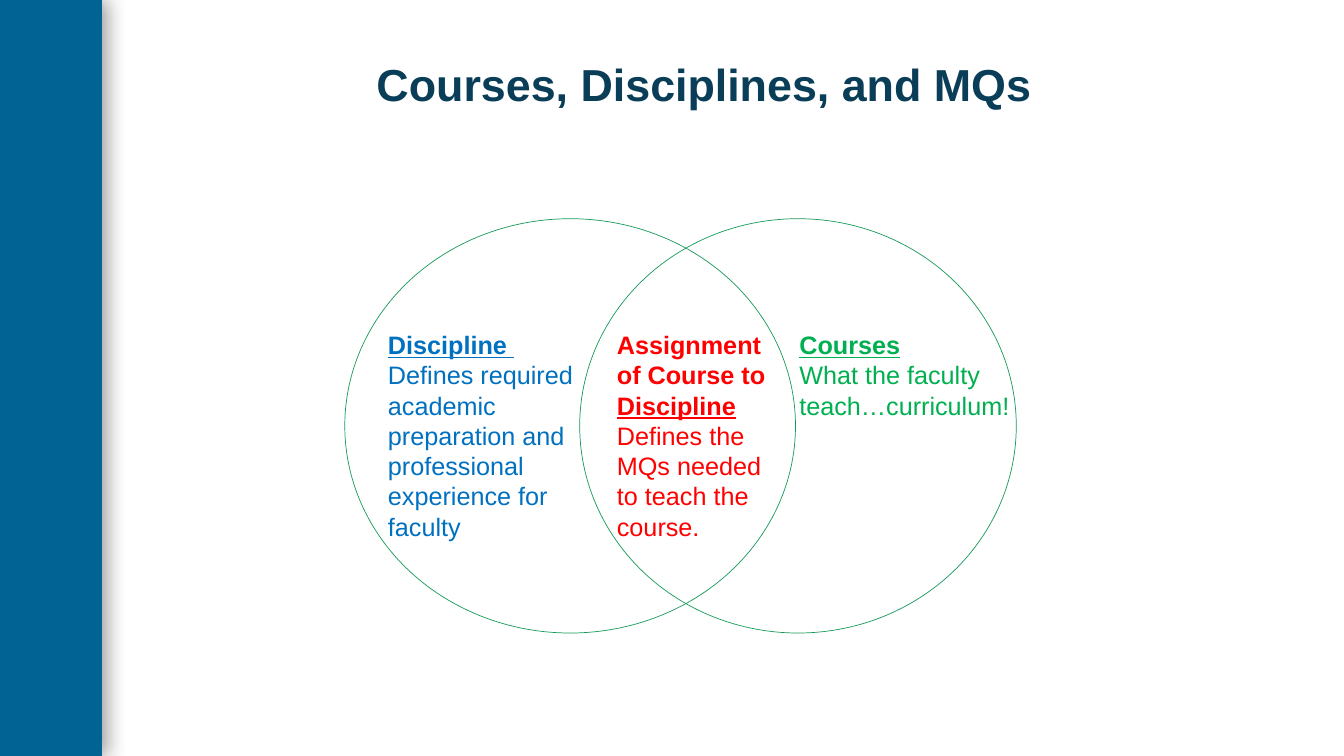
from lxml import etree
from pptx import Presentation
from pptx.dml.color import RGBColor
from pptx.enum.shapes import MSO_SHAPE as Preset
from pptx.enum.text import MSO_AUTO_SIZE as AutoSize, PP_ALIGN as Align
from pptx.oxml.ns import qn
from pptx.util import Inches, Pt

NAVY = RGBColor(0x0A, 0x3D, 0x57)
TEAL = RGBColor(0x00, 0x63, 0x93)
OUTLINE = RGBColor(0x18, 0x9B, 0x5A)
BLUE = RGBColor(0x00, 0x70, 0xC0)
GREEN = RGBColor(0x00, 0xB0, 0x50)
RED = RGBColor(0xFF, 0x00, 0x00)

# Content: each run is (text, bold, underlined)
TITLE = [[("Courses, Disciplines, and MQs", True, False)]]
DISCIPLINE = [
    [("Discipline", True, True), (" ", False, True)],
    [("Defines required academic preparation and professional experience for faculty", False, False)],
]
COURSES = [
    [("Courses", True, True)],
    [("What the faculty teach…curriculum!", False, False)],
]
ASSIGNMENT = [[
    ("Assignment of Course to ", True, False),
    ("Discipline", True, True),
    (" Defines the MQs needed to teach the course.", False, False),
]]

# Layout in inches
CIRCLE_TOP, CIRCLE_HEIGHT = 2.17, 4.11
CIRCLES = [(3.42, 4.47), (5.75, 4.33)]  # left, width
LABEL_TOP = 3.22
LABELS = [  # paragraphs, colour, left, width, height
    (DISCIPLINE, BLUE, 3.75, 2.27, 2.22),
    (COURSES, GREEN, 7.83, 2.46, 1.01),
    (ASSIGNMENT, RED, 6.02, 1.81, 2.52),
]


def add_shape(page, preset, left, top, width, height):
    shape = page.shapes.add_shape(
        preset, Inches(left), Inches(top), Inches(width), Inches(height))
    shape.shadow.inherit = False
    return shape


def add_text(page, paragraphs, color, size, left, top, width, height, align=Align.LEFT):
    box = page.shapes.add_textbox(
        Inches(left), Inches(top), Inches(width), Inches(height))
    frame = box.text_frame
    frame.word_wrap = True
    frame.auto_size = AutoSize.SHAPE_TO_FIT_TEXT
    for index, runs in enumerate(paragraphs):
        para = frame.add_paragraph() if index else frame.paragraphs[0]
        para.alignment = align
        for text, bold, underlined in runs:
            span = para.add_run()
            span.text = text
            span.font.name = "Arial"
            span.font.size = Pt(size)
            span.font.bold = bold
            span.font.underline = underlined
            span.font.color.rgb = color


def add_soft_shadow(shape):
    effects = shape._element.spPr.find(qn("a:effectLst"))
    shadow = etree.SubElement(
        effects, qn("a:outerShdw"), blurRad=str(Pt(15)), dist=str(Pt(3)),
        dir="0", algn="l", rotWithShape="0")
    color = etree.SubElement(shadow, qn("a:srgbClr"), val="000000")
    etree.SubElement(color, qn("a:alpha"), val="40000")


def main():
    deck = Presentation()
    deck.slide_width, deck.slide_height = Inches(13.33), Inches(7.5)
    page = deck.slides.add_slide(deck.slide_layouts[6])

    # Side band
    band = add_shape(page, Preset.RECTANGLE, 0, 0, 1.01, 7.5)
    band.fill.solid()
    band.fill.fore_color.rgb = TEAL
    band.line.fill.background()
    add_soft_shadow(band)

    # Overlapping circles
    for left, width in CIRCLES:
        circle = add_shape(page, Preset.OVAL, left, CIRCLE_TOP, width, CIRCLE_HEIGHT)
        circle.fill.background()
        circle.line.color.rgb = OUTLINE
        circle.line.width = Pt(0.5)

    # Labels and title
    for paragraphs, color, left, width, height in LABELS:
        add_text(page, paragraphs, color, 18, left, LABEL_TOP, width, height)
    add_text(page, TITLE, NAVY, 32, 3.14, 0.51, 7.69, 0.64, Align.CENTER)

    deck.save("out.pptx")


if __name__ == "__main__":
    main()
